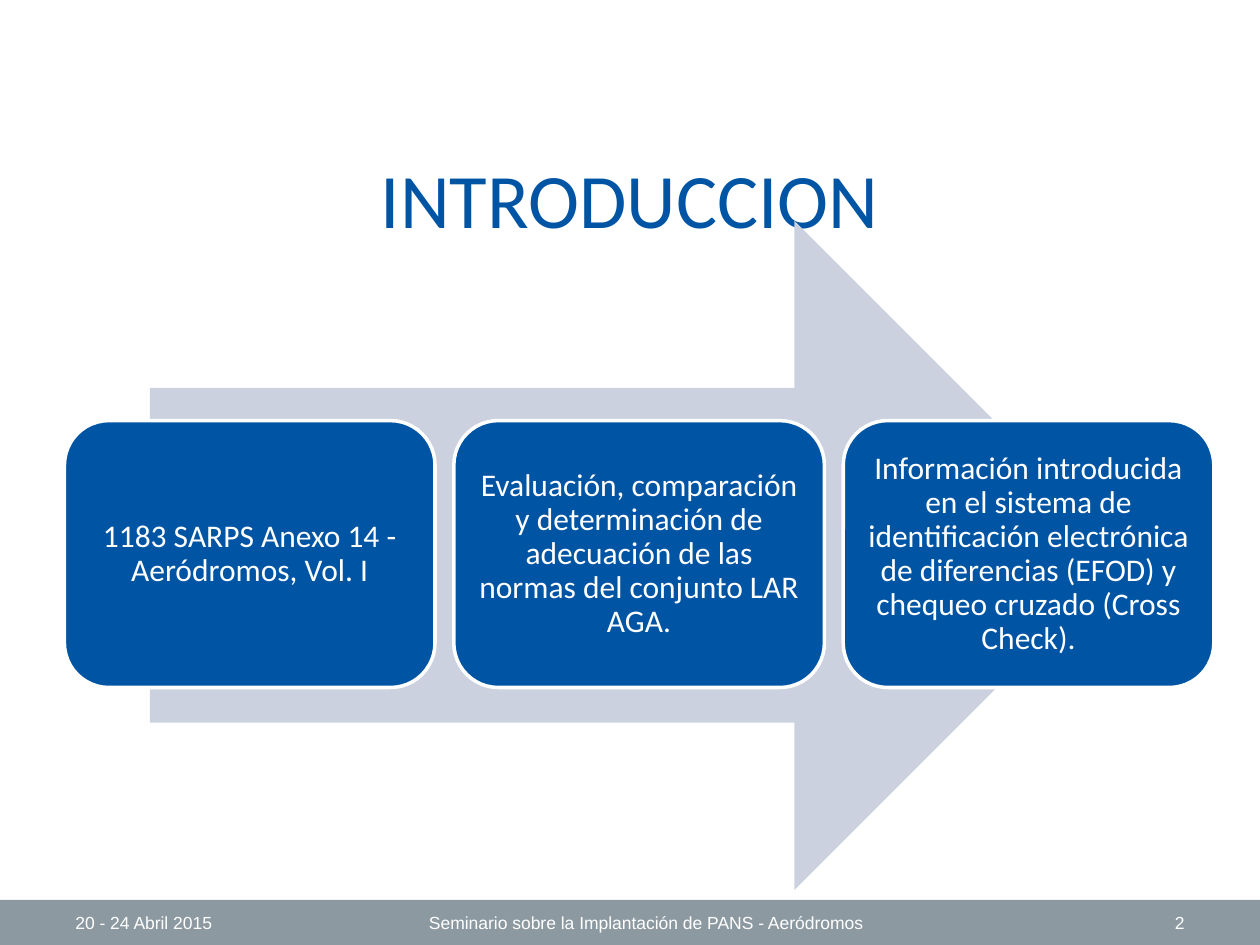
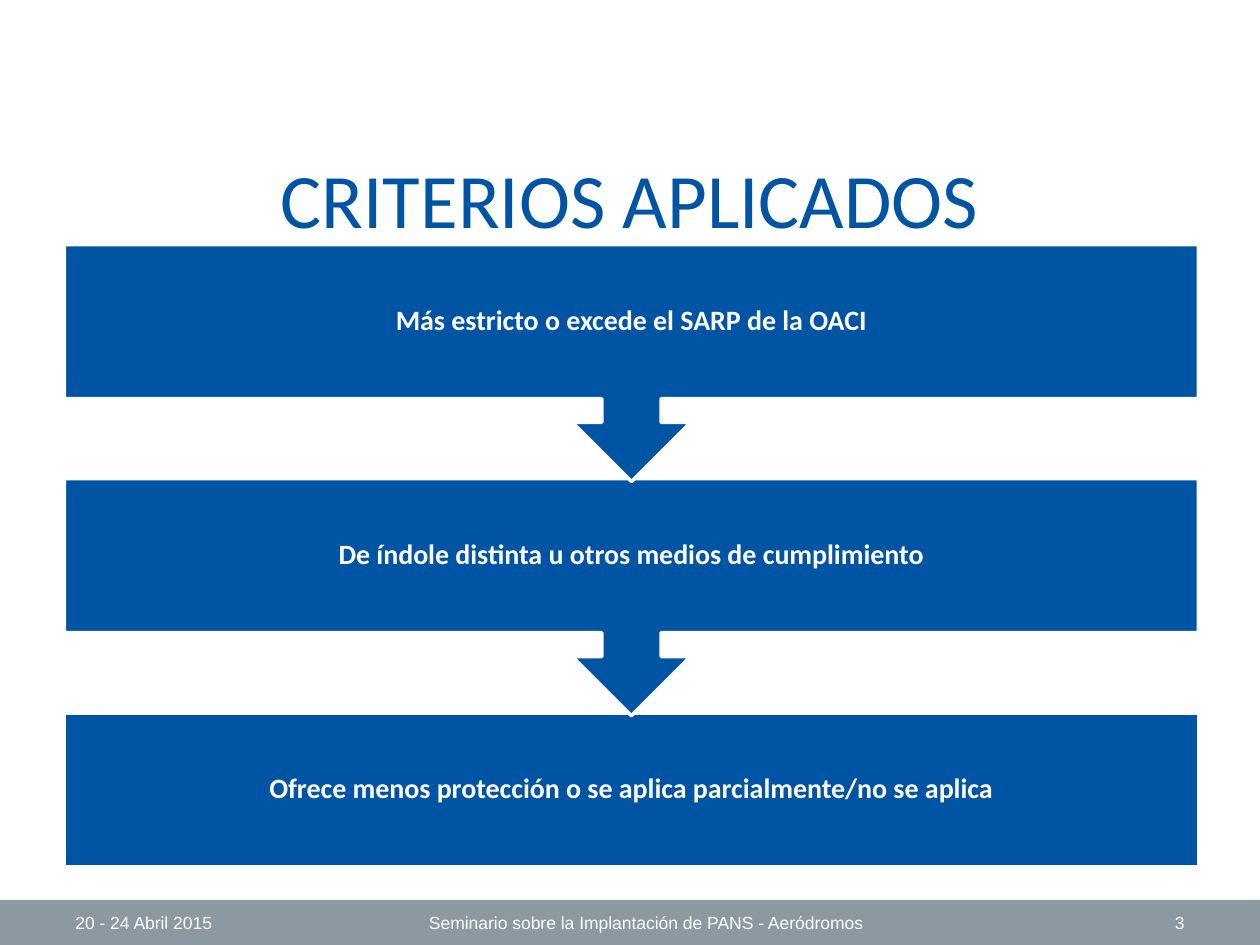
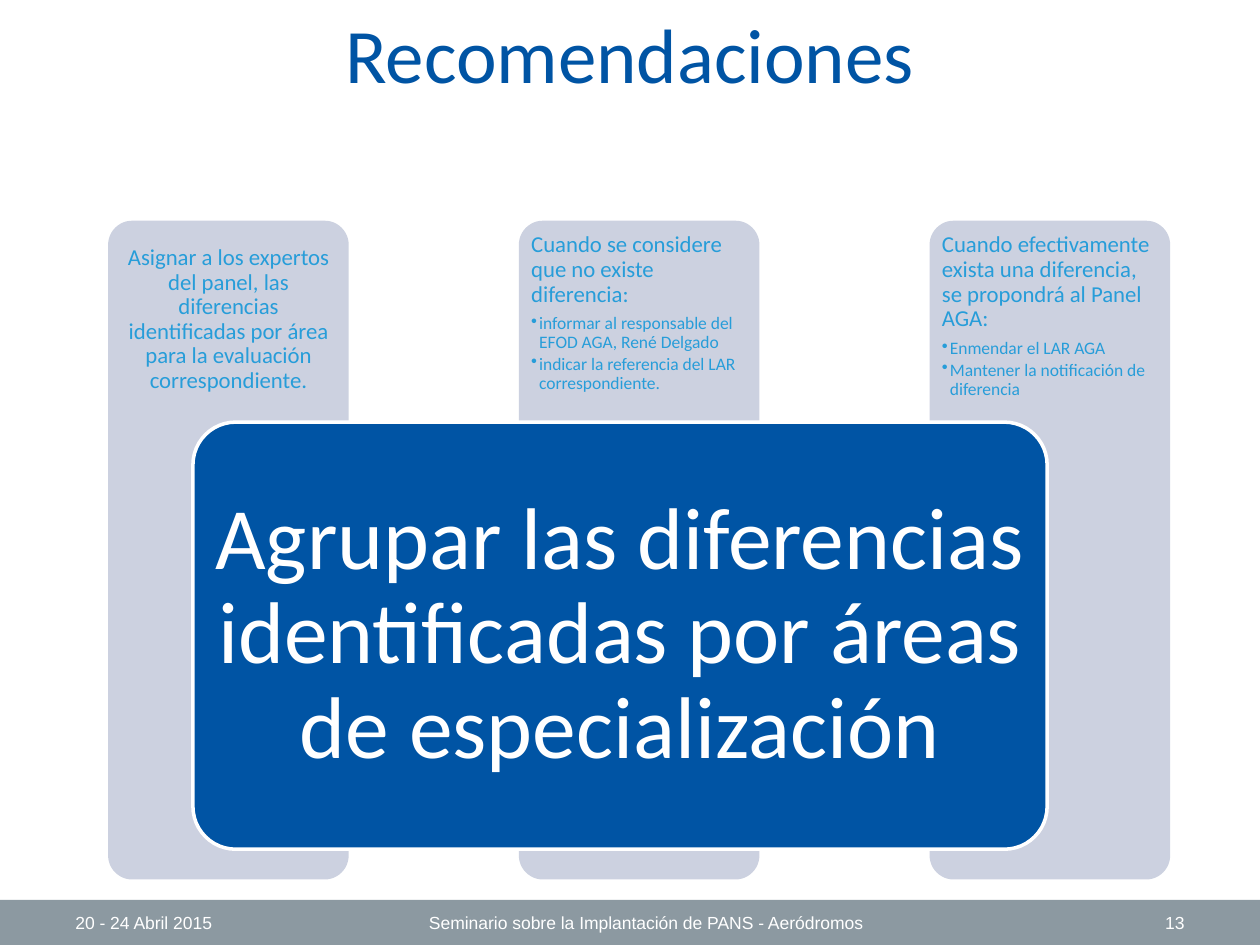
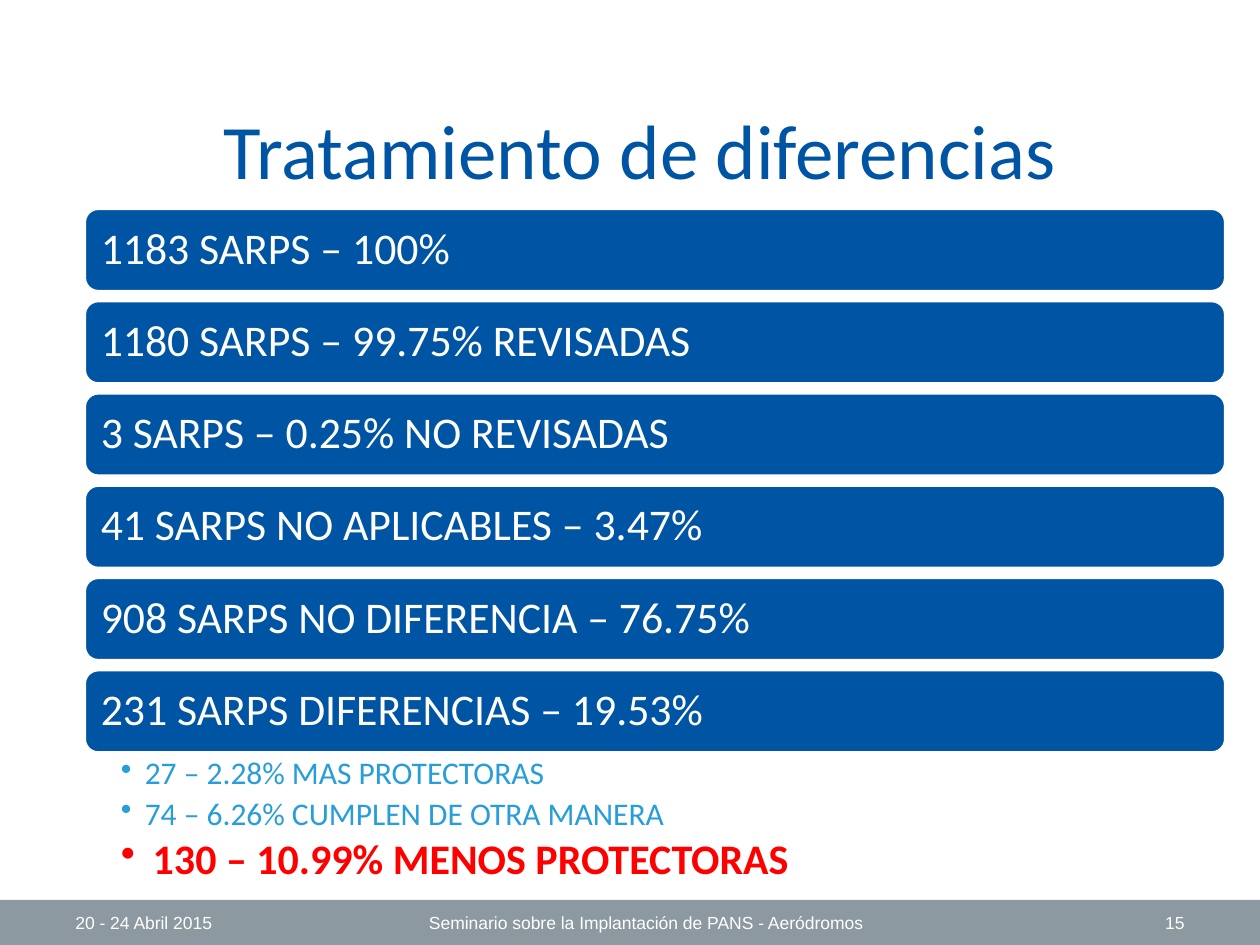
from lxml.etree import SubElement
from pptx import Presentation
from pptx.dml.color import RGBColor
from pptx.enum.shapes import MSO_SHAPE
from pptx.enum.text import MSO_ANCHOR, MSO_AUTO_SIZE, PP_ALIGN
from pptx.oxml.ns import qn
from pptx.util import Cm, Pt

# Shared look
BLUE = RGBColor(0x00, 0x54, 0xA4)
PALE = RGBColor(0xCC, 0xD1, 0xE0)
SKY = RGBColor(0x27, 0x9D, 0xD9)
GREY = RGBColor(0x8C, 0x99, 0xA1)
RED = RGBColor(0xFF, 0x00, 0x00)
WHITE = RGBColor(0xFF, 0xFF, 0xFF)
BODY_FONT = "Calibri"
FOOTER_FONT = "Arial"
FOOTER_TOP, FOOTER_HEIGHT = 18.14, 0.91
DATE = "20 - 24 Abril 2015"
EVENT = "Seminario sobre la Implantación de PANS - Aeródromos"


def place(area):
    """Turn (left, top, width, height) in centimetres into lengths."""
    return [Cm(value) for value in area]


def set_frame(shape, insets, anchor):
    frame = shape.text_frame
    frame.word_wrap = True
    frame.auto_size = MSO_AUTO_SIZE.NONE
    frame.vertical_anchor = anchor
    (frame.margin_left, frame.margin_top,
     frame.margin_right, frame.margin_bottom) = place(insets)
    return frame


def add_bullet(para, indent):
    properties = para._p.get_or_add_pPr()
    properties.set("marL", str(Cm(indent)))
    properties.set("indent", str(-Cm(indent)))
    SubElement(properties, qn("a:buChar")).set("char", "•")


def style_para(para, text, size, color, align=PP_ALIGN.LEFT, bold=False,
               name=BODY_FONT, spacing=0.9, bullet=None):
    para.text = text
    para.alignment = align
    para.line_spacing = spacing
    if bullet:
        add_bullet(para, bullet)
    para.font.size = Pt(size)
    para.font.color.rgb = color
    para.font.bold = bold
    para.font.name = name


def add_block(page, kind, area, fill=BLUE, outline=True, corner=None):
    block = page.shapes.add_shape(kind, *place(area))
    block.shadow.inherit = False
    block.fill.solid()
    block.fill.fore_color.rgb = fill
    if outline:
        block.line.color.rgb = WHITE
        block.line.width = Pt(2)
    else:
        block.line.fill.background()
    if corner:
        block.adjustments[0] = corner
    return block


def write_block(block, text, size, inset, align=PP_ALIGN.CENTER, bold=False):
    frame = set_frame(block, [inset] * 4, MSO_ANCHOR.MIDDLE)
    style_para(frame.paragraphs[0], text, size, WHITE, align, bold)


def add_text(page, area, insets, anchor=MSO_ANCHOR.TOP):
    return set_frame(page.shapes.add_textbox(*place(area)), insets, anchor)


def add_footer(page, number):
    parts = [
        (1.27, 5.92, DATE, PP_ALIGN.LEFT),
        (8.31, 9.42, EVENT, PP_ALIGN.CENTER),
        (18.21, 5.92, number, PP_ALIGN.RIGHT),
    ]
    for left, width, text, align in parts:
        frame = add_text(page, (left, FOOTER_TOP, width, FOOTER_HEIGHT),
                         (0.25, 0.13, 0.25, 0.13), MSO_ANCHOR.MIDDLE)
        style_para(frame.paragraphs[0], text, 10, WHITE, align,
                   name=FOOTER_FONT, spacing=1.0)


def add_page(deck, layout, title, area, number):
    page = deck.slides.add_slide(layout)
    heading = page.shapes.title
    heading.left, heading.top, heading.width, heading.height = place(area)
    frame = set_frame(heading, (0.25, 0.13, 0.25, 0.13), MSO_ANCHOR.TOP)
    style_para(frame.paragraphs[0], title, 44, BLUE, PP_ALIGN.CENTER, spacing=1.0)
    add_footer(page, number)
    return page


def add_layout_band(page, layout):
    """Draw the footer band and hand it over to the shared layout."""
    band = add_block(page, MSO_SHAPE.RECTANGLE,
                     (0, FOOTER_TOP, 25.4, FOOTER_HEIGHT), GREY, outline=False)
    layout.shapes.element.insert(2, band.element)


def fill_introduction(page):
    add_block(page, MSO_SHAPE.RIGHT_ARROW, (3.02, 4.45, 19.74, 13.49), PALE, outline=False)
    steps = [
        "1183 SARPS Anexo 14 - Aeródromos, Vol. I",
        "Evaluación, comparación y determinación de adecuación de las normas "
        "del conjunto LAR AGA.",
        "Información introducida en el sistema de identificación electrónica "
        "de diferencias (EFOD) y chequeo cruzado (Cross Check).",
    ]
    for index, step in enumerate(steps):
        card = add_block(page, MSO_SHAPE.ROUNDED_RECTANGLE,
                         (1.3 + 7.85 * index, 8.48, 7.47, 5.38))
        write_block(card, step, 18, 0.18)


def fill_criteria(page):
    criteria = [
        "Más estricto o excede el SARP de la OACI",
        "De índole distinta u otros medios de cumplimiento",
        "Ofrece menos protección o se aplica parcialmente/no se aplica",
    ]
    last = len(criteria) - 1
    # From the bottom up, so that each arrow tip lies over the next box
    for index in range(last, -1, -1):
        kind, height = MSO_SHAPE.DOWN_ARROW_CALLOUT, 4.78
        if index == last:
            kind, height = MSO_SHAPE.RECTANGLE, 3.1
        box = add_block(page, kind, (1.3, 4.93 + 4.72 * index, 22.86, height))
        write_block(box, criteria[index], 16, 0.3, bold=True)


def fill_recommendations(page):
    columns = [
        ("Asignar a los expertos del panel, las diferencias identificadas por "
         "área para la evaluación correspondiente.", []),
        ("Cuando se considere que no existe diferencia:",
         ["informar al responsable del EFOD AGA, René Delgado",
          "indicar la referencia del LAR correspondiente."]),
        ("Cuando efectivamente exista una diferencia, se propondrá al Panel AGA:",
         ["Enmendar el LAR AGA", "Mantener la notificación de diferencia"]),
    ]
    for index, (lead, points) in enumerate(columns):
        left = 2.18 + 8.28 * index
        add_block(page, MSO_SHAPE.ROUNDED_RECTANGLE, (left, 4.45, 4.85, 13.28),
                  PALE, outline=False, corner=0.1)
        anchor = MSO_ANCHOR.TOP if points else MSO_ANCHOR.MIDDLE
        align = PP_ALIGN.LEFT if points else PP_ALIGN.CENTER
        frame = add_text(page, (left, 4.45, 4.85, 3.99), [0.25] * 4, anchor)
        style_para(frame.paragraphs[0], lead, 13, SKY, align)
        for point in points:
            para = frame.add_paragraph()
            style_para(para, point, 10, SKY, bullet=0.16)
            para.space_before = Pt(4.5 if point == points[0] else 1.5)

    # Summary over the columns
    summary = add_block(page, MSO_SHAPE.ROUNDED_RECTANGLE,
                        (3.89, 8.51, 17.22, 8.61), corner=0.1)
    write_block(summary, "Agrupar las diferencias identificadas por áreas de "
                "especialización", 50, 0.08)


def fill_treatment(page):
    rows = [
        "1183 SARPS – 100%",
        "1180 SARPS – 99.75% REVISADAS",
        "3 SARPS – 0.25% NO REVISADAS",
        "41 SARPS NO APLICABLES – 3.47%",
        "908 SARPS NO DIFERENCIA – 76.75%",
        "231 SARPS DIFERENCIAS – 19.53%",
    ]
    for index, row in enumerate(rows):
        bar = add_block(page, MSO_SHAPE.ROUNDED_RECTANGLE,
                        (1.7, 4.2 + 1.86 * index, 23.01, 1.68))
        write_block(bar, row, 25, 0.25, PP_ALIGN.LEFT)

    # Breakdown of the differences
    details = [
        ("27 – 2.28% MAS PROTECTORAS", 18, SKY, False, 0.48),
        ("74 – 6.26% CUMPLEN DE OTRA MANERA", 18, SKY, False, 0.48),
        ("130 – 10.99% MENOS PROTECTORAS", 24, RED, True, 0.64),
    ]
    frame = add_text(page, (1.7, 15.19, 23.01, 2.87), (0.74, 0.08, 0.48, 0.08))
    for index, (text, size, color, bold, indent) in enumerate(details):
        para = frame.add_paragraph() if index else frame.paragraphs[0]
        style_para(para, text, size, color, bold=bold, bullet=indent)
        if index:
            para.space_before = Pt(3.6)


def main():
    deck = Presentation()
    deck.slide_width, deck.slide_height = Cm(25.4), Cm(19.05)
    layout = deck.slide_layouts[5]
    upper_title = (1.27, 2.92, 22.86, 3.18)
    pages = [
        ("INTRODUCCION", upper_title, "2", fill_introduction),
        ("CRITERIOS APLICADOS", upper_title, "3", fill_criteria),
        ("Recomendaciones", (1.27, 0, 22.86, 3.12), "13", fill_recommendations),
        ("Tratamiento de diferencias", (1.09, 1.93, 23.62, 2.13), "15", fill_treatment),
    ]
    for title, area, number, fill_page in pages:
        page = add_page(deck, layout, title, area, number)
        fill_page(page)
    add_layout_band(page, layout)
    deck.save("out.pptx")


if __name__ == "__main__":
    main()
